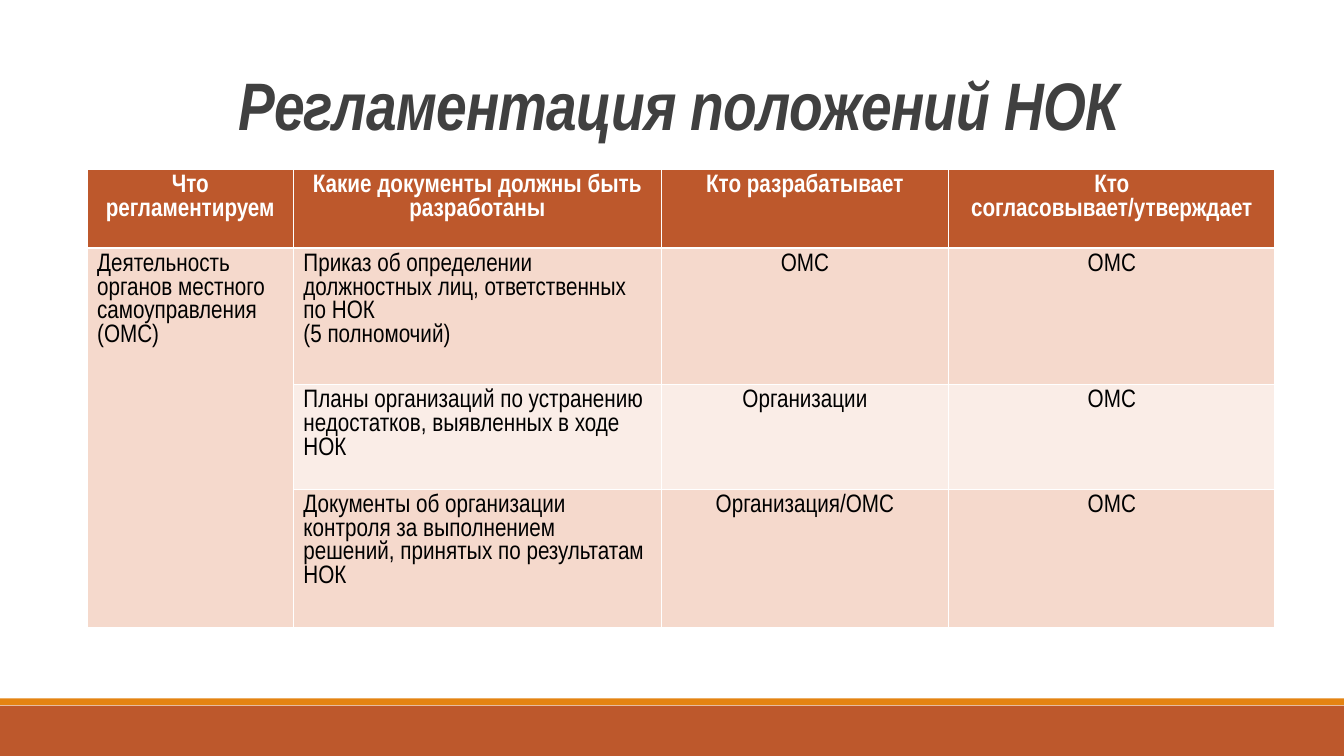
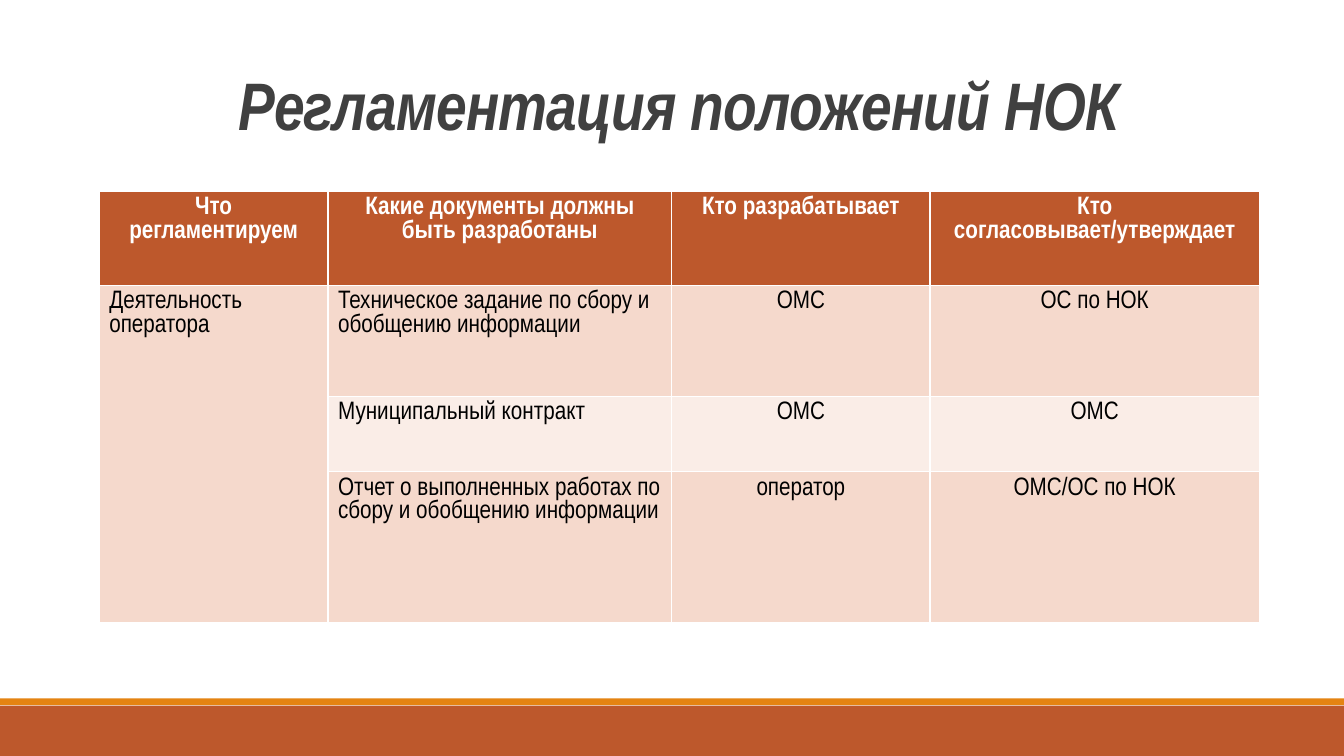
from pptx import Presentation
from pptx.dml.color import RGBColor
from pptx.enum.shapes import MSO_SHAPE
from pptx.enum.text import MSO_ANCHOR, PP_ALIGN
from pptx.util import Pt

RECT = MSO_SHAPE.RECTANGLE
BOTTOM = MSO_ANCHOR.BOTTOM
LEFT, CENTER = PP_ALIGN.LEFT, PP_ALIGN.CENTER

FONT = "Arial Narrow"
RUST, ORANGE, GRAY = "BD582C", "E48312", "404040"
WHITE, BLACK = "FFFFFF", "000000"
ROW_FILLS = ["F5D9CC", "FAEDE7"]
WIDTH, HEIGHT = 960, 540

TITLE = "Регламентация положений НОК"
HEADER = ["Что регламентируем", "Какие документы должны быть разработаны",
          "Кто разрабатывает", "Кто согласовывает/утверждает"]

# Each subject spans all the document rows of its table.
TABLES = [
    {
        "left": 62.2, "top": 121,
        "cols": [147.4, 262.8, 205.2, 233.2],
        "rows": [56.2, 97.4, 74.9, 98.6],
        "subject": "Деятельность органов местного самоуправления (ОМС)",
        "documents": [
            ("Приказ об определении должностных лиц, ответственных по НОК\n"
             "(5 полномочий)", "ОМС", "ОМС"),
            ("Планы организаций по устранению недостатков, выявленных в ходе НОК",
             "Организации", "ОМС"),
            ("Документы об организации контроля за выполнением решений, "
             "принятых по результатам НОК", "Организация/ОМС", "ОМС"),
        ],
    },
    {
        "left": 70.9, "top": 136.8,
        "cols": [163.4, 245.6, 184.4, 235.4],
        "rows": [67, 79.2, 54, 108],
        "subject": "Деятельность\nоператора",
        "documents": [
            ("Техническое задание по сбору и обобщению информации",
             "ОМС", "ОС по НОК"),
            ("Муниципальный контракт", "ОМС", "ОМС"),
            ("Отчет о выполненных работах по сбору и обобщению информации",
             "оператор", "ОМС/ОС по НОК"),
        ],
    },
]


def rgb(color):
    return RGBColor.from_string(color)


def style(p, size, color, align, bold=False, italic=False):
    p.alignment = align
    font = p.font
    font.name, font.size = FONT, Pt(size)
    font.bold, font.italic = bold, italic
    font.color.rgb = rgb(color)


def add_band(s, top, height, color):
    band = s.shapes.add_shape(RECT, 0, Pt(top), Pt(WIDTH), Pt(height))
    band.shadow.inherit = False
    band.fill.solid()
    band.fill.fore_color.rgb = rgb(color)
    band.line.fill.background()


def add_title(s):
    tf = s.shapes.add_textbox(Pt(89.2), Pt(24.5), Pt(792), Pt(82)).text_frame
    tf.word_wrap = True
    tf.vertical_anchor = BOTTOM
    p = tf.paragraphs[0]
    r = p.add_run()
    r.text = TITLE
    r.font._element.set("spc", "-50")
    p.line_spacing = 0.85
    style(p, 48, GRAY, CENTER, bold=True, italic=True)


def fill_cell(cell, text, fill, color, align, bold=False):
    cell.fill.solid()
    cell.fill.fore_color.rgb = rgb(fill)
    cell.text = text
    for p in cell.text_frame.paragraphs:
        style(p, 18, color, align, bold)


def add_table(s, data):
    cols, rows = data["cols"], data["rows"]
    table = s.shapes.add_table(
        len(rows), len(cols), Pt(data["left"]), Pt(data["top"]),
        Pt(sum(cols)), Pt(sum(rows))).table
    for column, width in zip(table.columns, cols):
        column.width = Pt(width)
    for row, height in zip(table.rows, rows):
        row.height = Pt(height)

    for c, text in enumerate(HEADER):
        fill_cell(table.cell(0, c), text, RUST, WHITE, CENTER, bold=True)
    subject = table.cell(1, 0)
    subject.merge(table.cell(len(rows) - 1, 0))
    fill_cell(subject, data["subject"], ROW_FILLS[0], BLACK, LEFT)
    for i, document in enumerate(data["documents"]):
        for c, text in enumerate(document, start=1):
            fill_cell(table.cell(i + 1, c), text, ROW_FILLS[i % 2], BLACK,
                      LEFT if c == 1 else CENTER)


def main():
    prs = Presentation()
    prs.slide_width, prs.slide_height = Pt(WIDTH), Pt(HEIGHT)
    for data in TABLES:
        s = prs.slides.add_slide(prs.slide_layouts[6])
        add_band(s, 504, 36, RUST)
        add_band(s, 498.8, 4.8, ORANGE)
        add_title(s)
        add_table(s, data)
    prs.save("out.pptx")


if __name__ == "__main__":
    main()
